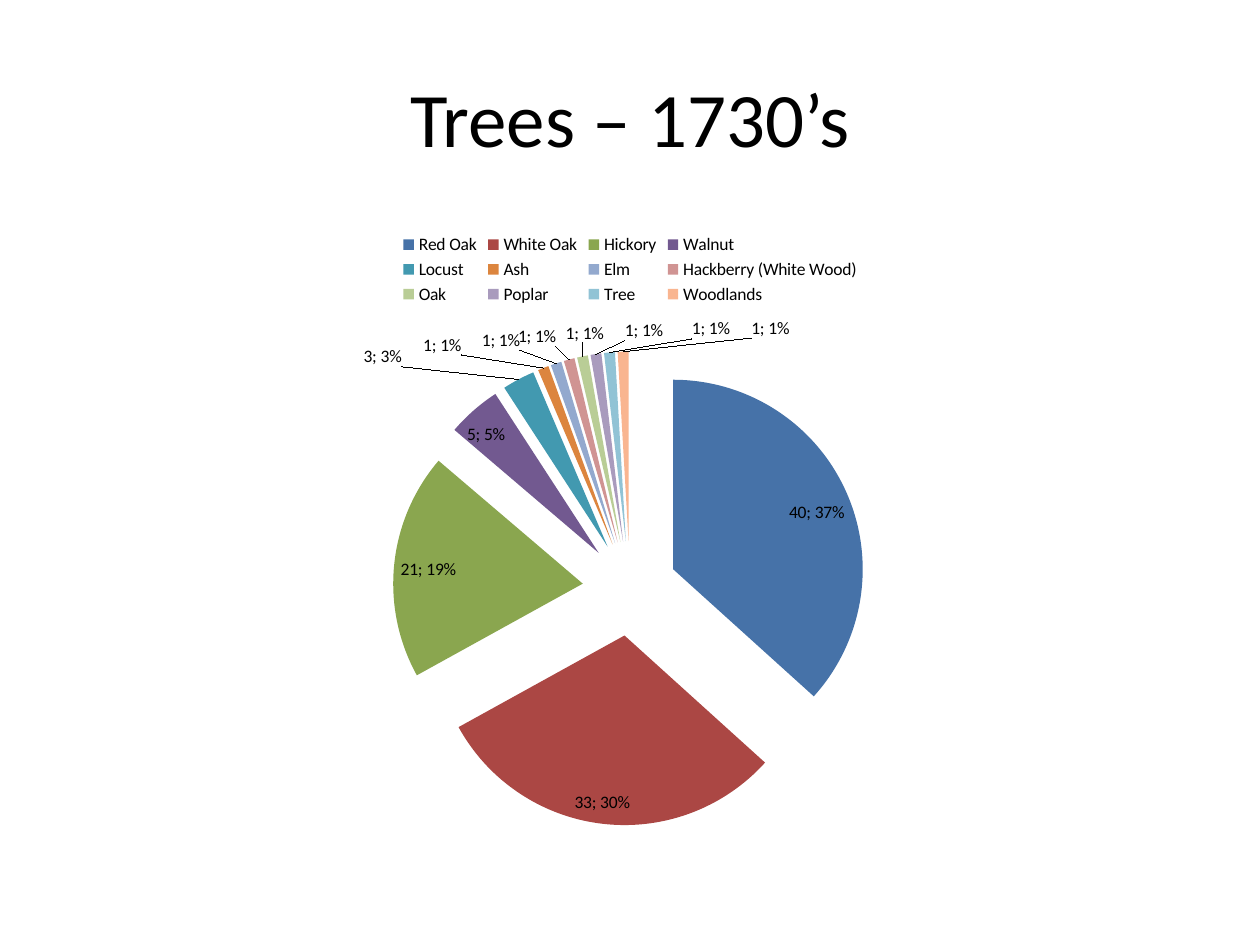
import lxml.etree
import pptx
import pptx.chart.data
import pptx.dml.color
import pptx.enum.chart
import pptx.enum.text
import pptx.oxml
import pptx.oxml.ns
import pptx.util
from pptx.util import Cm, Pt

FONT = "Calibri"
# Tree, count, slice colour
TREES = [
    ("Red Oak", 40, "4672A8"),
    ("White Oak", 33, "AB4744"),
    ("Hickory", 21, "8AA64F"),
    ("Walnut", 5, "725990"),
    ("Locust", 3, "4299B0"),
    ("Ash", 1, "DC853E"),
    ("Elm", 1, "93A9CE"),
    ("Hackberry (White Wood)", 1, "D09493"),
    ("Oak", 1, "B9CD96"),
    ("Poplar", 1, "A99BBD"),
    ("Tree", 1, "91C3D5"),
    ("Woodlands", 1, "F9B590"),
]
# Sideways shift of the small slices' labels, as a share of the chart width
LABEL_SHIFTS = {4: -0.1, 5: -0.07, 6: -0.03, 7: -0.01,
                8: 0.02, 9: 0.06, 10: 0.09, 11: 0.13}
LABEL_RISE = -0.01


def color(value):
    return pptx.dml.color.RGBColor.from_string(value)


def set_font(font, size):
    font.name = FONT
    font.size = Pt(size)
    font.color.rgb = color("000000")


def chart_element(tag, content):
    namespace = pptx.oxml.ns.nsdecls("c")
    return pptx.oxml.parse_xml(f"<c:{tag} {namespace}>{content}</c:{tag}>")


def manual_layout(**values):
    return "<c:manualLayout>" + "".join(
        f'<c:{name} val="{value}"/>' for name, value in values.items()
    ) + "</c:manualLayout>"


def add_title(slide, text):
    box = slide.shapes.add_textbox(Cm(1.27), Cm(0.76), Cm(22.86), Cm(3.18))
    frame = box.text_frame
    frame.word_wrap = True
    frame.vertical_anchor = pptx.enum.text.MSO_ANCHOR.MIDDLE
    paragraph = frame.paragraphs[0]
    paragraph.text = text
    paragraph.alignment = pptx.enum.text.PP_ALIGN.CENTER
    set_font(paragraph.font, 44)


def place_plot(chart):
    plot_area = chart.plots[0]._element.getparent()
    for layout in plot_area.findall(pptx.oxml.ns.qn("c:layout")):
        plot_area.remove(layout)
    plot_area.insert(0, chart_element("layout", manual_layout(
        layoutTarget="inner", xMode="edge", yMode="edge",
        x=0.29, y=0.21, w=0.42, h=0.76)))


def explode(series, percent):
    explosion = chart_element("explosion", "")
    explosion.set("val", str(percent))
    series._element.find(pptx.oxml.ns.qn("c:tx")).addnext(explosion)


def add_labels(series):
    labels = series.data_labels
    labels.show_value = True
    labels.show_percentage = True
    labels.position = pptx.enum.chart.XL_LABEL_POSITION.BEST_FIT
    set_font(labels.font, 10)
    # Labels of the small slices are spread out, with leader lines
    for position, (index, shift) in enumerate(LABEL_SHIFTS.items()):
        layout = manual_layout(x=shift, y=LABEL_RISE)
        labels._element.insert(position, chart_element("dLbl", (
            f'<c:idx val="{index}"/><c:layout>{layout}</c:layout>'
            '<c:dLblPos val="bestFit"/><c:showLegendKey val="0"/>'
            '<c:showVal val="1"/><c:showCatName val="0"/>'
            '<c:showSerName val="0"/><c:showPercent val="1"/>'
            '<c:showBubbleSize val="0"/>')))


def add_pie(slide):
    data = pptx.chart.data.CategoryChartData()
    data.categories = [name for name, _, _ in TREES]
    data.add_series("Series 1", [count for _, count, _ in TREES])
    chart = slide.shapes.add_chart(
        pptx.enum.chart.XL_CHART_TYPE.PIE,
        Cm(1.27), Cm(4.45), Cm(22.86), Cm(12.57), data).chart
    chart.has_title = False
    set_font(chart.font, 10)
    place_plot(chart)

    # Legend
    chart.has_legend = True
    chart.legend.position = pptx.enum.chart.XL_LEGEND_POSITION.TOP
    chart.legend.include_in_layout = False
    set_font(chart.legend.font, 10)

    # Slices
    chart.plots[0].vary_by_categories = True
    series = chart.plots[0].series[0]
    explode(series, 25)
    for index, (_, _, fill_color) in enumerate(TREES):
        fill = series.points[index].format.fill
        fill.solid()
        fill.fore_color.rgb = color(fill_color)
    add_labels(series)


def main():
    presentation = pptx.Presentation()
    presentation.slide_width = Cm(25.4)
    presentation.slide_height = Cm(19.05)
    slide = presentation.slides.add_slide(presentation.slide_layouts[6])
    add_title(slide, "Trees – 1730’s")
    add_pie(slide)
    presentation.save("out.pptx")


if __name__ == "__main__":
    main()
